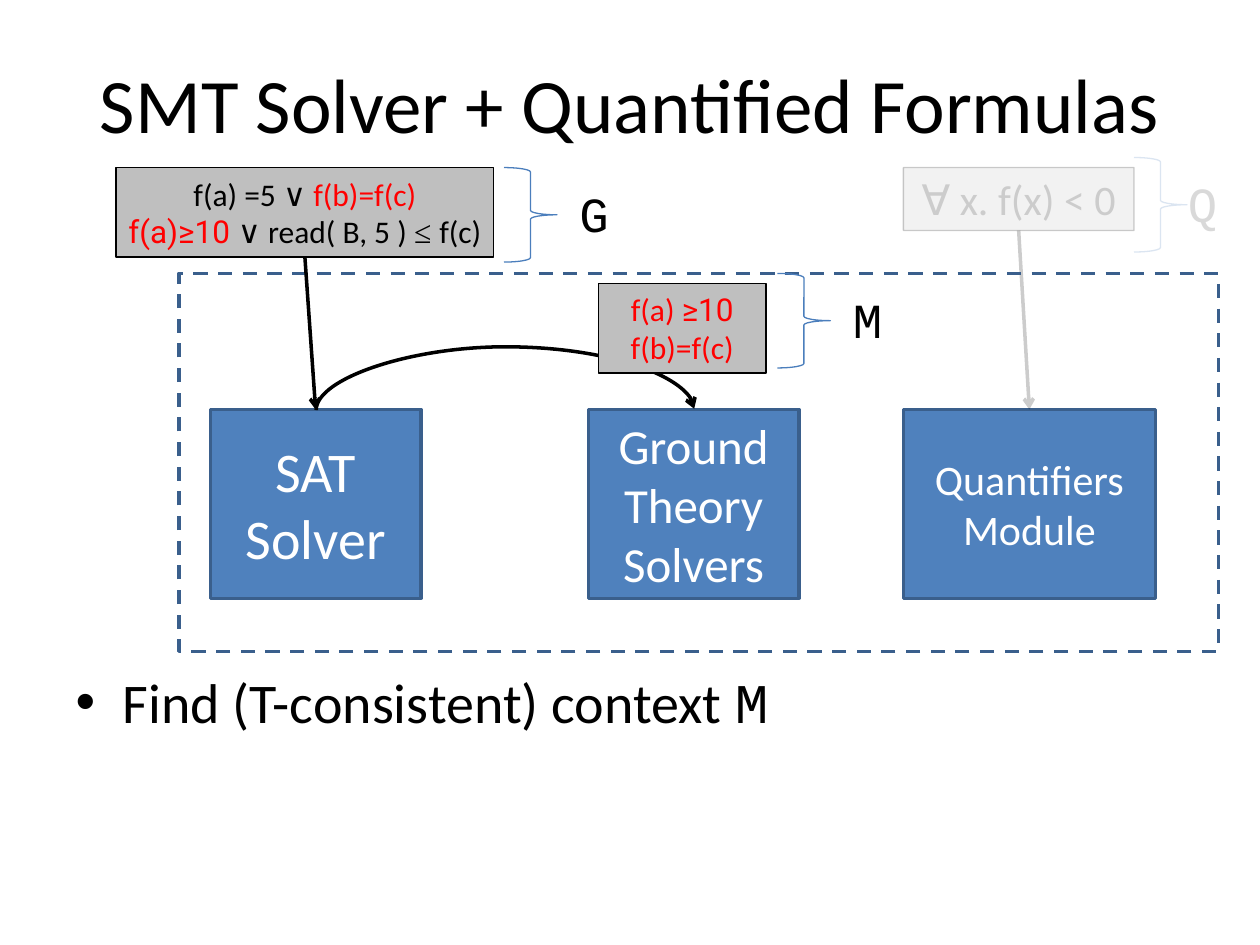
from dataclasses import dataclass
from typing import Optional

from lxml import etree
from pptx import Presentation
from pptx.dml.color import RGBColor
from pptx.enum.dml import MSO_LINE
from pptx.enum.shapes import MSO_CONNECTOR, MSO_SHAPE
from pptx.enum.text import MSO_ANCHOR, PP_ALIGN
from pptx.oxml.ns import qn
from pptx.util import Inches, Pt

RECT, BRACE = MSO_SHAPE.RECTANGLE, MSO_SHAPE.RIGHT_BRACE
STRAIGHT, CURVE = MSO_CONNECTOR.STRAIGHT, MSO_CONNECTOR.CURVE
DASH = MSO_LINE.DASH
CENTER, LEFT = PP_ALIGN.CENTER, PP_ALIGN.LEFT
MIDDLE = MSO_ANCHOR.MIDDLE
TOP_SIDE, BOTTOM_SIDE = 0, 2

COLORS = {
    "black": "000000", "white": "FFFFFF", "red": "FF0000",
    "gray": "BFBFBF", "faded_gray": "F2F2F2",
    "faded_text": "D9D9D9", "faded_formula": "CCCCCC",
    "blue": "4F81BD", "edge": "3A5F8C", "brace": "4B7EBC",
}
BODY_FONT, SYMBOL_FONT = "Calibri", "Roboto"
CODE_FONT, MATH_FONT = "Courier New", "Times New Roman"
FADED = 20  # percent opacity


@dataclass
class Run:
    text: str
    color: str = "black"
    font: str = BODY_FONT


@dataclass
class Box:
    at: tuple
    lines: list
    size: int
    fill: Optional[str] = "blue"
    edge: str = "edge"
    width: float = 2
    wrap: bool = True
    edge_alpha: int = 100


@dataclass
class Brace:
    left: float
    top: float
    label: str
    label_left: float
    color: str = "black"
    alpha: int = 100


def rgb(name: str) -> RGBColor:
    return RGBColor.from_string(COLORS[name])


def write(tf, lines: list, size: int, align=CENTER) -> None:
    for i, runs in enumerate(lines):
        p = tf.paragraphs[0] if i == 0 else tf.add_paragraph()
        p.alignment = align
        for run in runs:
            r = p.add_run()
            r.text = run.text
            for key, value in {"name": run.font, "size": Pt(size)}.items():
                setattr(r.font, key, value)
            r.font.color.rgb = rgb(run.color)


def style_line(sp, color: str, width: float, alpha: int = 100) -> None:
    sp.line.color.rgb = rgb(color)
    sp.line.width = Pt(width)
    if alpha < 100:
        paint = sp.line._get_or_add_ln().find(qn("a:solidFill"))[0]
        etree.SubElement(paint, qn("a:alpha"), val=str(alpha * 1000))


def add_box(shapes, box: Box):
    sp = shapes.add_shape(RECT, *map(Inches, box.at))
    sp.shadow.inherit = False
    if box.fill:
        sp.fill.solid()
        sp.fill.fore_color.rgb = rgb(box.fill)
    else:
        sp.fill.background()
    style_line(sp, box.edge, box.width, box.edge_alpha)
    tf = sp.text_frame
    tf.word_wrap = box.wrap
    tf.vertical_anchor = MIDDLE
    write(tf, box.lines, box.size)
    return sp


def add_brace(shapes, brace: Brace) -> None:
    sp = shapes.add_shape(BRACE, *map(Inches, (brace.left, brace.top, 0.42, 0.75)))
    sp.shadow.inherit = False
    sp.fill.background()
    style_line(sp, "brace", 0.75, brace.alpha)
    label = shapes.add_textbox(
        *map(Inches, (brace.label_left, brace.top + 0.08, 0.45, 0.57)))
    label.text_frame.word_wrap = False
    write(label.text_frame, [[Run(brace.label, brace.color, CODE_FONT)]], 28, LEFT)


def style_arrow(line, alpha: int = 100) -> None:
    style_line(line, "black", 2, alpha)
    etree.SubElement(line.line._get_or_add_ln(), qn("a:tailEnd"), type="arrow")
    etree.SubElement(line._element.spPr, qn("a:effectLst"))


def add_arrow(shapes, source, target, alpha: int = 100) -> None:
    line = shapes.add_connector(STRAIGHT, 0, 0, 0, 0)
    line.begin_connect(source, BOTTOM_SIDE)
    line.end_connect(target, TOP_SIDE)
    style_arrow(line, alpha)


def add_arch(shapes, left: float, right: float, base: float, rise: float) -> None:
    """Curved arrow that leaves and arrives at the same height."""
    thin, span = 0.01, right - left
    x, y = (left + right - thin) / 2, base - span / 2
    line = shapes.add_connector(
        CURVE, *map(Inches, (x, y, x + thin, y + span)))
    xfrm = line._element.spPr.find(qn("a:xfrm"))
    for key, value in {"rot": "5400000", "flipH": "1", "flipV": "1"}.items():
        xfrm.set(key, value)
    guides = line._element.spPr.find(qn("a:prstGeom")).find(qn("a:avLst"))
    etree.SubElement(guides, qn("a:gd"), name="adj1",
                     fmla=f"val {round(rise / thin * 100000)}")
    style_arrow(line)


def note(at: tuple, lines: list, size: int = 18,
         fill: str = "gray", edge_alpha: int = 100) -> Box:
    return Box(at, lines, size, fill, "black", 0.75, False, edge_alpha)


def module(left: float, width: float, size: int, *lines: str) -> Box:
    return Box((left, 3.25, width, 1.5), [[Run(t, "white")] for t in lines], size)


def place(sp, at: tuple) -> None:
    for key, value in zip(("left", "top", "width", "height"), at):
        setattr(sp, key, Inches(value))


GROUND_NOTE = note((0.92, 1.33, 3, 0.71), [
    [Run("f(a) =5 ∨ "), Run("f(b)=f(c)", "red")],
    [Run("f(a)≥10 ", "red", SYMBOL_FONT), Run("∨ read( B, 5 ) "),
     Run("≤ ", font=MATH_FONT), Run("f(c)")],
])
CONTEXT_NOTE = note((4.75, 2.25, 1.33, 0.71), [
    [Run("f(a) ", "red"), Run("≥10", "red", SYMBOL_FONT)],
    [Run("f(b)=f(c)", "red")],
])
QUANTIFIED_NOTE = note((7.17, 1.33, 1.83, 0.5),
                       [[Run("∀ x. f(x) < 0", "faded_formula")]],
                       24, "faded_gray", FADED)
BRACES = [
    Brace(4, 1.33, "G", 4.5),
    Brace(6.17, 2.17, "M", 6.67),
    Brace(9, 1.25, "Q", 9.33, "faded_text", FADED),
]


def main() -> None:
    prs = Presentation()
    prs.slide_width, prs.slide_height = Inches(10), Inches(7.5)
    s = prs.slides.add_slide(prs.slide_layouts[1])
    title, body = s.placeholders
    place(title, (0.5, 0.3, 9, 1.03))
    write(title.text_frame, [[Run("SMT Solver + Quantified Formulas")]], 44)
    place(body, (0.5, 5.25, 9.17, 1.92))
    write(body.text_frame, [[Run("Find (T-consistent) context "),
                             Run("M", font=CODE_FONT)]], 32, LEFT)

    sat = add_box(s.shapes, module(1.67, 1.67, 32, "SAT Solver"))
    add_box(s.shapes, module(4.67, 1.67, 28, "Ground", "Theory Solvers"))
    quantifiers = add_box(s.shapes, module(7.17, 2, 24, "Quantifiers Module"))
    quantified = add_box(s.shapes, QUANTIFIED_NOTE)
    add_arrow(s.shapes, quantified, quantifiers, FADED)
    frame = add_box(s.shapes, Box((1.42, 2.17, 8.25, 3), [], 18, None))
    frame.line.dash_style = DASH
    ground = add_box(s.shapes, GROUND_NOTE)
    add_arrow(s.shapes, ground, sat)
    for brace in BRACES:
        add_brace(s.shapes, brace)
    add_arch(s.shapes, 2.51, 5.51, 3.25, 0.51)
    add_box(s.shapes, CONTEXT_NOTE)
    prs.save("out.pptx")


if __name__ == "__main__":
    main()
